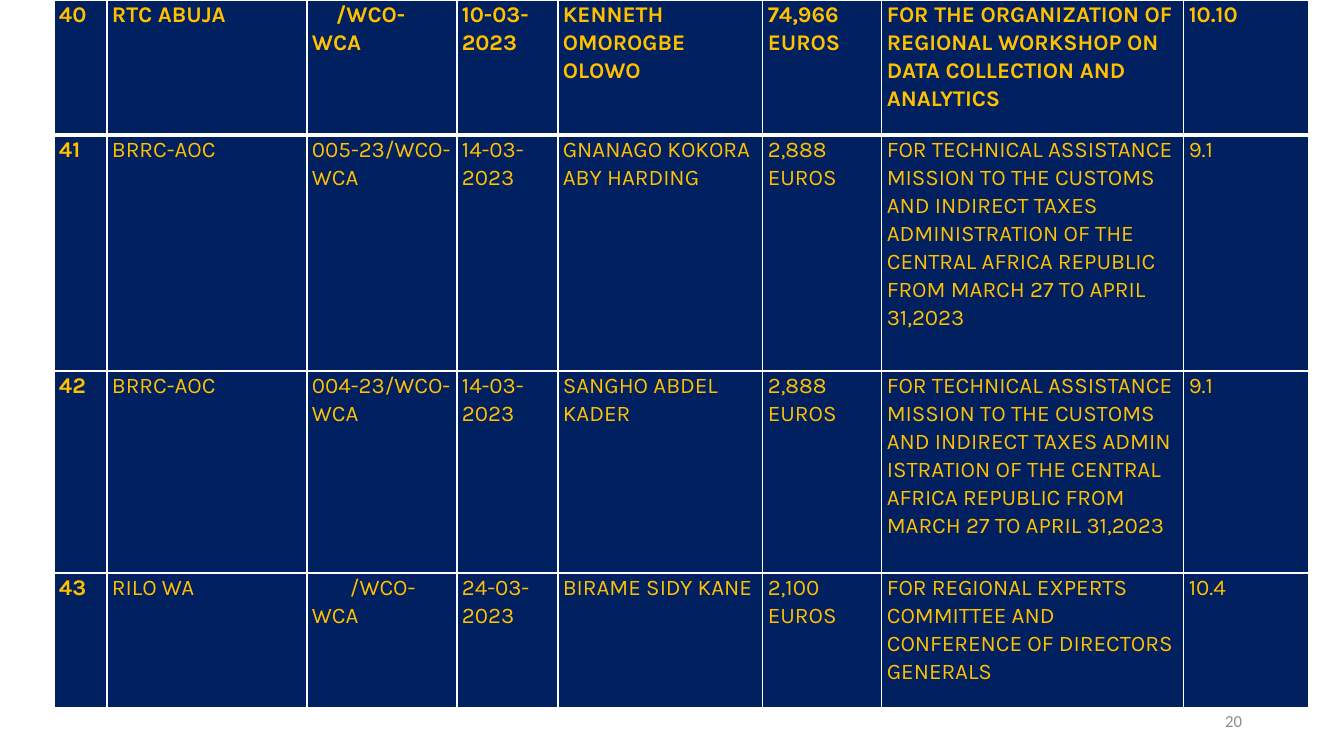
"""Build the slide with rows 40 to 43 of the mission funding register."""
from lxml import etree
from pptx import Presentation
from pptx.dml.color import RGBColor
from pptx.enum.text import MSO_ANCHOR, PP_ALIGN
from pptx.oxml.ns import qn
from pptx.util import Pt

RIGHT = PP_ALIGN.RIGHT
MIDDLE = MSO_ANCHOR.MIDDLE
PX = 914400 / 100.8
NAVY, GOLD, WHITE, GREY = "002060", "FFC000", "FFFFFF", "8C8C8C"


def px(length):
    return round(length * PX)


def color(value):
    return RGBColor.from_string(value)


column_widths = [53, 200, 150, 101, 205, 119, 302, 125]
row_heights = [135, 236, 202, 135]
entries = [
    ["40", "RTC ABUJA", "/WCO-WCA", "10-03-2023", "KENNETH OMOROGBE OLOWO", "74,966 EUROS",
     "FOR THE ORGANIZATION OF REGIONAL WORKSHOP ON DATA COLLECTION AND ANALYTICS", "10.10"],
    ["41", "BRRC-AOC", "005-23/WCO-WCA", "14-03-2023", "GNANAGO KOKORA ABY HARDING", "2,888 EUROS",
     "FOR TECHNICAL ASSISTANCE MISSION TO THE CUSTOMS AND INDIRECT TAXES ADMINISTRATION "
     "OF THE CENTRAL AFRICA REPUBLIC FROM MARCH 27 TO APRIL 31,2023", "9.1"],
    ["42", "BRRC-AOC", "004-23/WCO-WCA", "14-03-2023", "SANGHO ABDEL KADER", "2,888 EUROS",
     "FOR TECHNICAL ASSISTANCE MISSION TO THE CUSTOMS AND INDIRECT TAXES ADMIN ISTRATION "
     "OF THE CENTRAL AFRICA REPUBLIC FROM MARCH 27 TO APRIL 31,2023", "9.1"],
    ["43", "RILO WA", "/WCO-WCA", "24-03-2023", "BIRAME SIDY KANE", "2,100 EUROS",
     "FOR REGIONAL EXPERTS COMMITTEE AND CONFERENCE OF DIRECTORS GENERALS", "10.4"],
]
reference_indents = {(0, 2): 24, (3, 2): 38}
cell_format = {"margin_left": px(5), "margin_right": px(5), "margin_top": 0, "margin_bottom": 0}

prs = Presentation()
prs.slide_width, prs.slide_height = px(1344), px(756)
slide = prs.slides.add_slide(prs.slide_layouts[6])

register = slide.shapes.add_table(
    len(entries), len(column_widths), px(54), 0, px(sum(column_widths)), px(sum(row_heights))).table
register.first_row = False
register.horz_banding = False
for column, width in zip(register.columns, column_widths):
    column.width = px(width)

for r, (entry, height) in enumerate(zip(entries, row_heights)):
    register.rows[r].height = px(height)
    for c, wording in enumerate(entry):
        cell = register.cell(r, c)
        for name, value in cell_format.items():
            setattr(cell, name, value)
        properties = cell._tc.get_or_add_tcPr()
        thick_side = {0: "lnB", 1: "lnT"}.get(r)
        for side in ("lnL", "lnR", "lnT", "lnB"):
            weight = Pt(3 if side == thick_side else 1)
            border = etree.SubElement(properties, qn(f"a:{side}"), w=str(weight))
            paint = etree.SubElement(border, qn("a:solidFill"))
            etree.SubElement(paint, qn("a:srgbClr"), val=WHITE)
        cell.fill.solid()
        cell.fill.fore_color.rgb = color(NAVY)

        paragraph = cell.text_frame.paragraphs[0]
        paragraph.line_spacing = 1.07
        if (r, c) in reference_indents:
            cell.margin_right = px(20)
            paragraph_properties = paragraph._p.get_or_add_pPr()
            paragraph_properties.set("marL", "0")
            paragraph_properties.set("indent", str(px(reference_indents[r, c])))
        run = paragraph.add_run()
        run.text = wording
        text_format = {"name": "Karla", "size": Pt(16), "bold": r == 0 or c == 0}
        for name, value in text_format.items():
            setattr(run.font, name, value)
        run.font.color.rgb = color(GOLD)

page_frame = slide.shapes.add_textbox(px(950), px(701), px(302), px(40)).text_frame
page_frame.word_wrap = True
page_frame.vertical_anchor = MIDDLE
page_paragraph = page_frame.paragraphs[0]
page_paragraph.alignment = RIGHT
page_number = page_paragraph.add_run()
page_number.text = "20"
for name, value in {"name": "Calibri", "size": Pt(12)}.items():
    setattr(page_number.font, name, value)
page_number.font.color.rgb = color(GREY)

prs.save("out.pptx")
